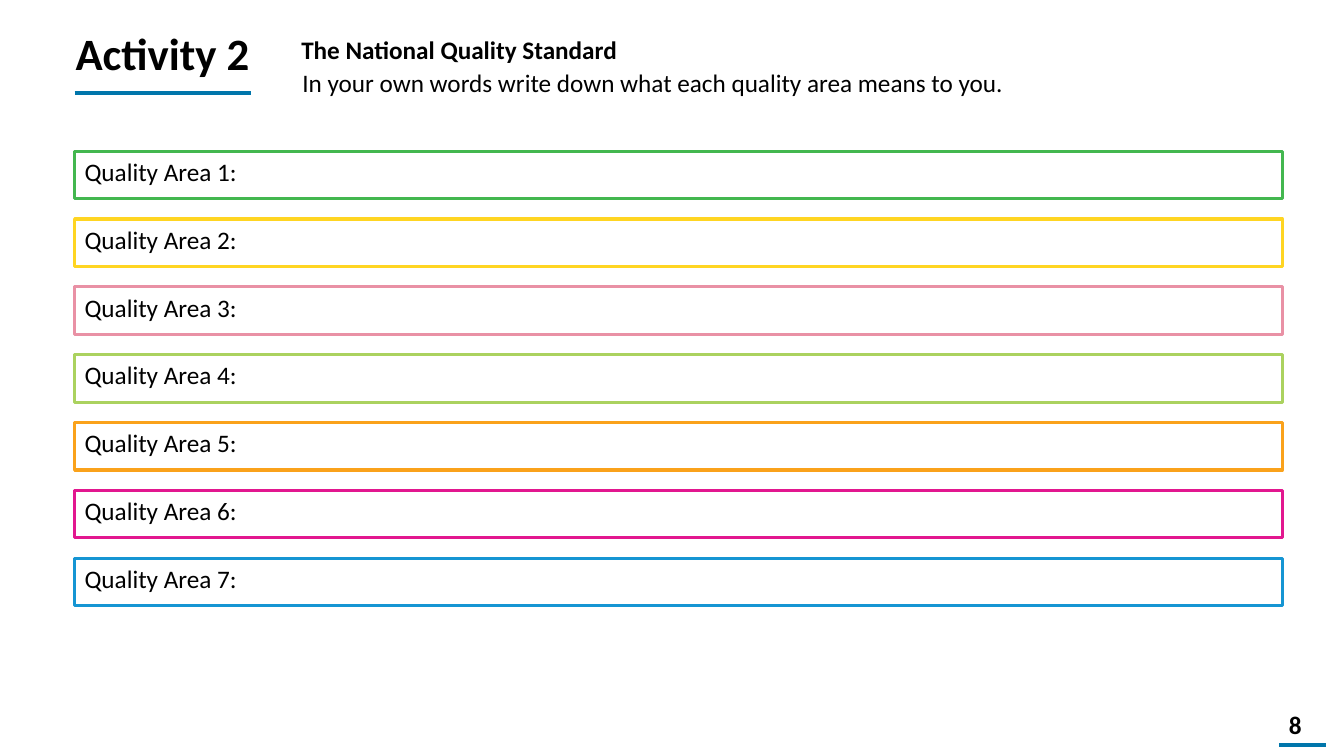
from lxml import etree
from pptx import Presentation
from pptx.dml.color import RGBColor
from pptx.enum import shapes, text
from pptx.oxml.ns import qn
from pptx.util import Inches, Pt

AREA_COLORS = ["43B74F", "FFD522", "E991A5", "ABD25F", "FAA21B", "E2178F", "1595D3"]
ACCENT = "0076AB"


def rgb(value):
    """Return the colour for a hex string."""
    return RGBColor.from_string(value)


def write(sp, content, size=18, bold=False, align=text.PP_ALIGN.LEFT,
          anchor=text.MSO_ANCHOR.TOP, left=0.1, right=0.1):
    """Put formatted text into a shape."""
    tf = sp.text_frame
    tf.word_wrap = True
    tf.auto_size = text.MSO_AUTO_SIZE.NONE
    tf.vertical_anchor = anchor
    tf.margin_left, tf.margin_right = Inches(left), Inches(right)
    tf.margin_top = tf.margin_bottom = Inches(0.05)
    p = tf.paragraphs[0]
    p.alignment = align
    r = p.add_run()
    r.text = content
    r.font.name = "Calibri"
    r.font.size = Pt(size)
    r.font.bold = bold
    r.font.color.rgb = rgb("000000")


def add_text(slide, x, y, w, h, content, **fmt):
    """Add a text box."""
    sp = slide.shapes.add_textbox(Inches(x), Inches(y), Inches(w), Inches(h))
    write(sp, content, **fmt)


def add_rule(slide, x, y, w):
    """Add a horizontal accent line."""
    line = slide.shapes.add_connector(
        shapes.MSO_CONNECTOR.STRAIGHT, Inches(x), Inches(y), Inches(x + w), Inches(y))
    line.line.color.rgb = rgb(ACCENT)
    line.line.width = Pt(3)
    etree.SubElement(line._element.spPr, qn("a:effectLst"))


def add_header(slide, x, y):
    """Place the underlined title and the instructions beside it."""
    title = slide.shapes.title
    title.left, title.top = Inches(x), Inches(y)
    title.width, title.height = Inches(1.95), Inches(0.64)
    write(title, "Activity 2", size=32, bold=True, right=0)
    add_rule(slide, x + 0.09, y + 0.71, 1.75)
    add_text(slide, x + 2.24, y + 0.08, 6.67, 0.4,
             "The National Quality Standard", bold=True)
    add_text(slide, x + 2.25, y + 0.41, 7.47, 0.4,
             "In your own words write down what each quality area means to you.")


def add_areas(slide, x, y, w, h):
    """Stack one outlined answer box per quality area in the given box."""
    box_h = 0.47
    step = (h - box_h) / (len(AREA_COLORS) - 1)
    for i, color in enumerate(AREA_COLORS):
        sp = slide.shapes.add_shape(
            shapes.MSO_SHAPE.RECTANGLE, Inches(x), Inches(y + i * step),
            Inches(w), Inches(box_h))
        sp.shadow.inherit = False
        sp.fill.background()
        sp.line.color.rgb = rgb(color)
        sp.line.width = Pt(2.25)
        write(sp, f"Quality Area {i + 1}:")


def add_page_number(slide, x, y):
    """Place the page number above its accent line."""
    add_text(slide, x, y, 0.22, 0.4, "8", bold=True, align=text.PP_ALIGN.RIGHT,
             anchor=text.MSO_ANCHOR.MIDDLE, left=0, right=0)
    add_rule(slide, x, y + 0.4, 0.46)


def main():
    """Build and save the activity slide."""
    prs = Presentation()
    prs.slide_width, prs.slide_height = Inches(13.33), Inches(7.5)
    slide = prs.slides.add_slide(prs.slide_layouts[5])
    add_header(slide, 0.65, 0.21)
    add_areas(slide, 0.74, 1.5, 11.98, 4.51)
    add_page_number(slide, 12.69, 6.99)
    prs.save("out.pptx")


if __name__ == "__main__":
    main()
